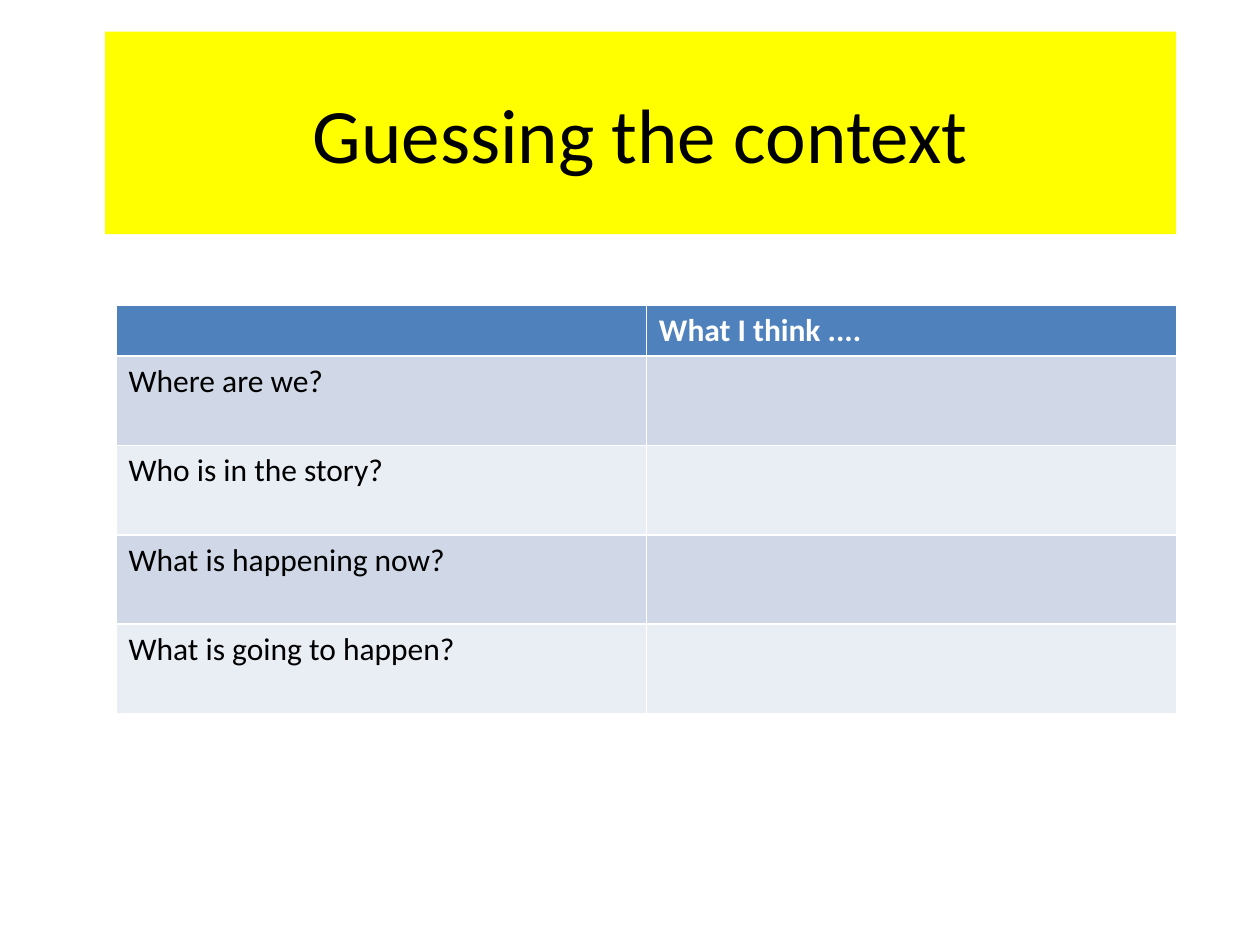
from pptx import Presentation
from pptx.dml.color import RGBColor
from pptx.enum.text import MSO_ANCHOR, PP_ALIGN
from pptx.util import Cm, Pt

COLORS = {
    "title": "FFFF00",
    "head": "4F81BD",
    "odd": "D0D8E8",
    "even": "E9EDF4",
    "dark": "000000",
    "light": "FFFFFF",
}
ROWS = [
    ("", "What I think ...."),
    ("Where are we?", ""),
    ("Who is in the story?", ""),
    ("What is happening now?", ""),
    ("What is going to happen?", ""),
]


class Deck:
    font = "Calibri"

    def __init__(self, wide, high):
        self.show = Presentation()
        self.show.slide_width = Cm(wide)
        self.show.slide_height = Cm(high)
        self.slide = self.show.slides.add_slide(self.show.slide_layouts[5])

    def paint(self, item, color):
        item.fill.solid()
        item.fill.fore_color.rgb = RGBColor.from_string(COLORS[color])

    def label(self, para, text, size, color, bold=False):
        run = para.add_run()
        run.text = text
        run.font.name = self.font
        run.font.size = Pt(size)
        run.font.bold = bold
        run.font.color.rgb = RGBColor.from_string(COLORS[color])

    def title(self, text, left, top, width, height):
        box = self.slide.shapes.title
        box.left, box.top = Cm(left), Cm(top)
        box.width, box.height = Cm(width), Cm(height)
        self.paint(box, "title")
        box.text_frame.vertical_anchor = MSO_ANCHOR.MIDDLE
        para = box.text_frame.paragraphs[0]
        para.alignment = PP_ALIGN.CENTER
        self.label(para, text, 44, "dark")

    def table(self, rows, left, top, width, head, body):
        high = head + body * (len(rows) - 1)
        grid = self.slide.shapes.add_table(
            len(rows), len(rows[0]), Cm(left), Cm(top), Cm(width), Cm(high)
        ).table
        for i, texts in enumerate(rows):
            first = i == 0
            grid.rows[i].height = Cm(head if first else body)
            fill = "head" if first else "odd" if i % 2 else "even"
            for j, text in enumerate(texts):
                cell = grid.cell(i, j)
                self.paint(cell, fill)
                if text:
                    color = "light" if first else "dark"
                    self.label(cell.text_frame.paragraphs[0], text, 18, color, first)

    def save(self):
        self.show.save("out.pptx")


def main():
    deck = Deck(25.4, 19.05)
    deck.title("Guessing the context", 2.12, 0.64, 21.59, 4.08)
    deck.table(ROWS, 2.34, 6.15, 21.38, 1.03, 1.8)
    deck.save()


if __name__ == "__main__":
    main()
